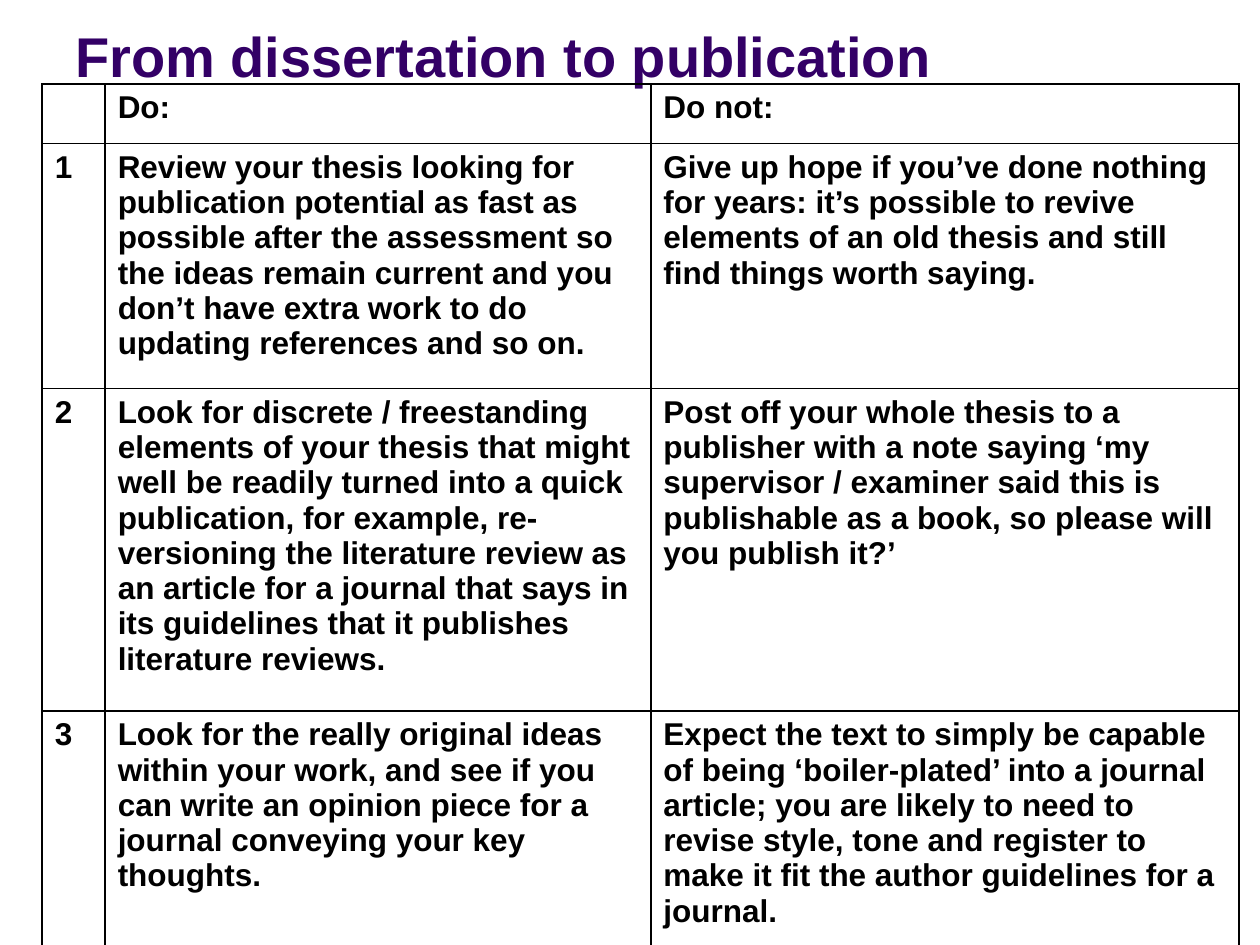
import pptx
import pptx.dml.color
import pptx.enum.text
import pptx.oxml
import pptx.oxml.ns
import pptx.util
from pptx.util import Cm

# Content
TITLE = "From dissertation to publication"
ROWS = [
    ("", "Do:", "Do not:"),
    ("1",
     "Review your thesis looking for publication potential as fast as possible after the "
     "assessment so the ideas remain current and you don’t have extra work to do updating "
     "references and so on.",
     "Give up hope if you’ve done nothing for years: it’s possible to revive elements of an "
     "old thesis and still find things worth saying."),
    ("2",
     "Look for discrete / freestanding elements of your thesis that might well be readily "
     "turned into a quick publication, for example, re-versioning the literature review as "
     "an article for a journal that says in its guidelines that it publishes literature "
     "reviews.",
     "Post off your whole thesis to a publisher with a note saying ‘my supervisor / examiner "
     "said this is publishable as a book, so please will you publish it?’"),
    ("3",
     "Look for the really original ideas within your work, and see if you can write an "
     "opinion piece for a journal conveying your key thoughts.",
     "Expect the text to simply be capable of being ‘boiler-plated’ into a journal article; "
     "you are likely to need to revise style, tone and register to make it fit the author "
     "guidelines for a journal."),
]
COLUMN_WIDTHS = [1.27, 11, 11.86]
ROW_HEIGHTS = [1.2, 4.94, 6.5, 4.27]

PURPLE = pptx.dml.color.RGBColor(0x33, 0x00, 0x66)
BLACK = pptx.dml.color.RGBColor(0x00, 0x00, 0x00)


def style_text(paragraph, size, color):
    paragraph.font.name = "Arial"
    paragraph.font.size = pptx.util.Pt(size)
    paragraph.font.bold = True
    paragraph.font.color.rgb = color


def add_borders(cell, color, width):
    properties = cell._tc.get_or_add_tcPr()
    for index, side in enumerate(("lnL", "lnR", "lnT", "lnB")):
        line = pptx.oxml.parse_xml(
            f'<a:{side} {pptx.oxml.ns.nsdecls("a")} w="{pptx.util.Pt(width)}">'
            f'<a:solidFill><a:srgbClr val="{color}"/></a:solidFill></a:{side}>')
        properties.insert(index, line)


presentation = pptx.Presentation()
presentation.slide_width, presentation.slide_height = Cm(25.4), Cm(19.05)
slide = presentation.slides.add_slide(presentation.slide_layouts[6])

# Title
title = slide.shapes.add_textbox(Cm(1.27), Cm(0.43), Cm(20.95), Cm(1.48))
title.text_frame.word_wrap = True
title.text_frame.vertical_anchor = pptx.enum.text.MSO_ANCHOR.BOTTOM
title.text_frame.text = TITLE
style_text(title.text_frame.paragraphs[0], 32, PURPLE)

# Table of advice
table = slide.shapes.add_table(
    len(ROWS), len(COLUMN_WIDTHS), Cm(0.85), Cm(1.69),
    Cm(sum(COLUMN_WIDTHS)), Cm(sum(ROW_HEIGHTS))).table
table.first_row = table.horz_banding = False
for column, width in zip(table.columns, COLUMN_WIDTHS):
    column.width = Cm(width)
for row, height, texts in zip(table.rows, ROW_HEIGHTS, ROWS):
    row.height = Cm(height)
    for cell, text in zip(row.cells, texts):
        cell.text = text
        style_text(cell.text_frame.paragraphs[0], 18, BLACK)
        cell.fill.background()
        add_borders(cell, BLACK, 1)

presentation.save("out.pptx")
